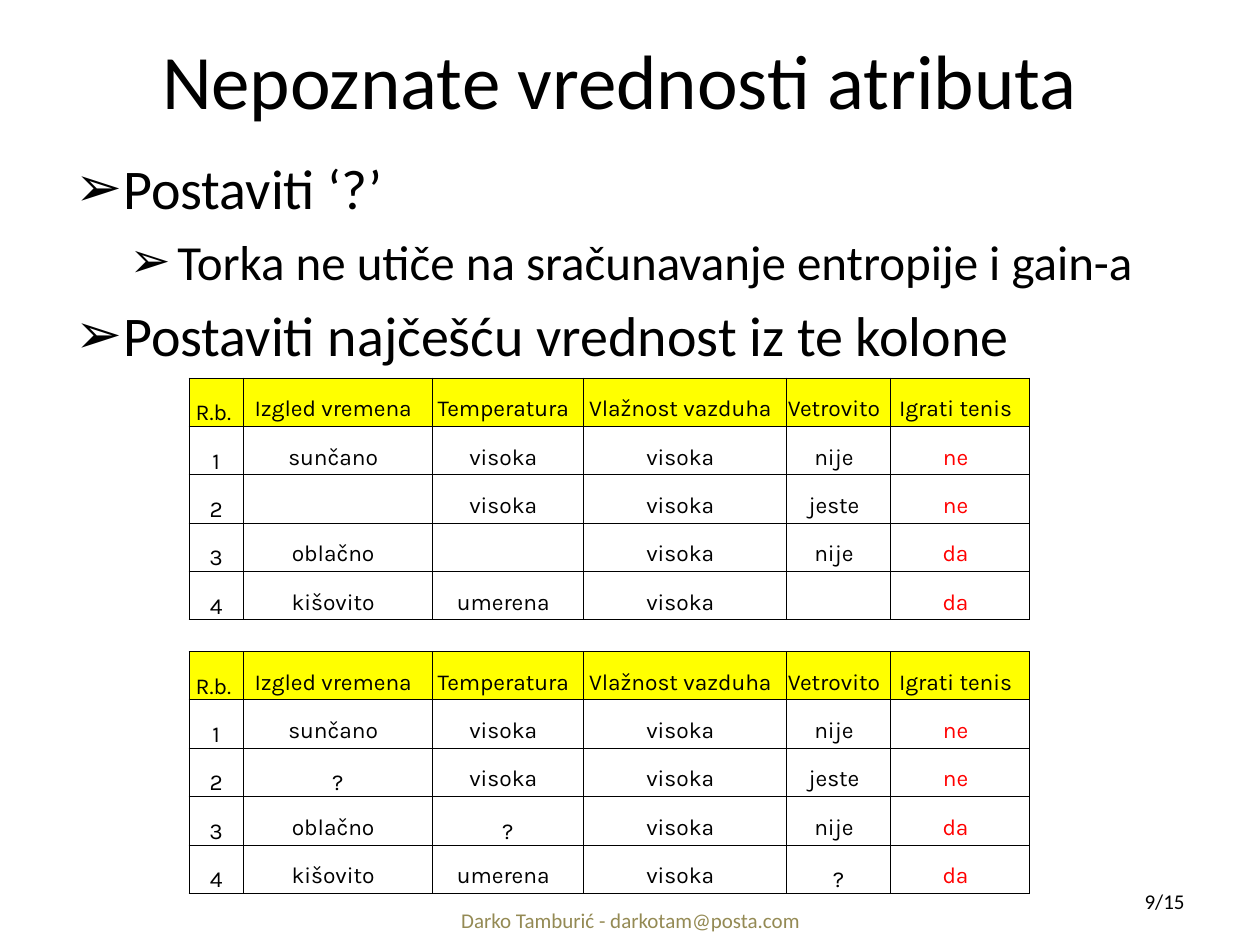
from dataclasses import dataclass

from lxml.etree import SubElement
from pptx import Presentation
from pptx.dml.color import RGBColor
from pptx.enum.text import MSO_ANCHOR, PP_ALIGN
from pptx.oxml.ns import qn
from pptx.util import Inches, Pt


@dataclass(frozen=True)
class Theme:
    font: str = "Calibri"
    grid_font: str = "Karla"
    ink: str = "000000"
    accent: str = "FF0000"
    head: str = "FFFF00"
    muted: str = "948A54"
    title: int = 44
    levels: tuple = (32, 28)
    cell: int = 13
    gap: int = 22
    foot: int = 12
    rule: float = 0.5


THEME = Theme()

POINTS = [
    (0, "Postaviti ‘?’"),
    (1, "Torka ne utiče na sračunavanje entropije i gain-a"),
    (0, "Postaviti najčešću vrednost iz te kolone"),
]
COLS = [0.43, 1.5, 1.2, 1.61, 0.83, 1.1]
HEADS = ["R.b. ", "Izgled vremena", "Temperatura", "Vlažnost vazduha",
         "Vetrovito", "Igrati tenis"]
DAYS = [
    ["1", "sunčano", "visoka", "visoka", "nije", "ne"],
    ["2", "", "visoka", "visoka", "jeste", "ne"],
    ["3", "oblačno", "", "visoka", "nije", "da"],
    ["4", "kišovito", "umerena", "visoka", "", "da"],
]


def add_text(para, text, size, font=THEME.font, color=THEME.ink, align=None):
    if align is not None:
        para.alignment = align
    run = para.add_run()
    run.text = text
    run.font.size = Pt(size)
    run.font.name = font
    run.font.color.rgb = RGBColor.from_string(color)


def add_box(slide, box, anchor):
    frame = slide.shapes.add_textbox(*map(Inches, box)).text_frame
    frame.word_wrap = True
    frame.vertical_anchor = anchor
    return frame


def add_title(slide, box, text):
    title = slide.shapes.title
    title.left, title.top, title.width, title.height = map(Inches, box)
    frame = title.text_frame
    frame.vertical_anchor = MSO_ANCHOR.MIDDLE
    add_text(frame.paragraphs[0], text, THEME.title, align=PP_ALIGN.CENTER)


def add_points(slide, box, points):
    frame = add_box(slide, box, MSO_ANCHOR.TOP)
    for i, (level, text) in enumerate(points):
        para = frame.paragraphs[0] if i == 0 else frame.add_paragraph()
        size = THEME.levels[level]
        para.level = level
        if i:
            para.space_before = Pt(round(size * 0.2))
        props = para._p.get_or_add_pPr()
        props.set("marL", str(Inches(0.38 + 0.43 * level)))
        props.set("indent", str(Inches(-0.38)))
        SubElement(props, qn("a:buFont"), typeface="Arial")
        SubElement(props, qn("a:buChar"), char="➢")
        add_text(para, text, size)


def set_border(cell):
    props = cell._tc.get_or_add_tcPr()
    for i, side in enumerate(("lnL", "lnR", "lnT", "lnB")):
        line = SubElement(props, qn(f"a:{side}"), w=str(Pt(THEME.rule)))
        fill = SubElement(line, qn("a:solidFill"))
        SubElement(fill, qn("a:srgbClr"), val=THEME.ink)
        props.remove(line)
        props.insert(i, line)


def fill_cell(cell, text, head, color, lift):
    """Format one cell; lift adds a tall space that raises the text."""
    cell.vertical_anchor = MSO_ANCHOR.BOTTOM
    cell.margin_left = cell.margin_right = cell.margin_top = Inches(0.01)
    cell.margin_bottom = 0
    if head:
        cell.fill.solid()
        cell.fill.fore_color.rgb = RGBColor.from_string(THEME.head)
    else:
        cell.fill.background()
    set_border(cell)
    if not text:
        return
    para = cell.text_frame.paragraphs[0]
    add_text(para, text, THEME.cell, THEME.grid_font, color, PP_ALIGN.CENTER)
    if lift:
        add_text(para, " ", THEME.gap, THEME.grid_font, color)


def add_grid(slide, box, rows):
    left, top, width, height = map(Inches, box)
    table = slide.shapes.add_table(len(rows), len(COLS), left, top,
                                   width, height).table
    table.first_row = table.horz_banding = False
    for col, size in zip(table.columns, COLS):
        col.width = Inches(size)
    for r, row in enumerate(rows):
        for c, text in enumerate(row):
            head = r == 0
            last = c == len(COLS) - 1
            color = THEME.accent if last and not head else THEME.ink
            fill_cell(table.cell(r, c), text, head, color,
                      lift=c > 0 and text != "?")


def add_foot(slide, box, text, color, align):
    frame = add_box(slide, box, MSO_ANCHOR.MIDDLE)
    add_text(frame.paragraphs[0], text, THEME.foot, color=color, align=align)


def main():
    deck = Presentation()
    deck.slide_width, deck.slide_height = Inches(10), Inches(7.5)
    slide = deck.slides.add_slide(deck.slide_layouts[5])
    add_title(slide, (0.42, 0, 9, 1.25), "Nepoznate vrednosti atributa")
    add_points(slide, (0.5, 1.17, 9, 4.95), POINTS)
    marked = [[text or "?" for text in row] for row in DAYS]
    for top, days in ((3, DAYS), (5.17, marked)):
        add_grid(slide, (1.5, top, sum(COLS), 1.92), [HEADS] + days)
    add_foot(slide, (3.42, 7.1, 3.17, 0.4),
             "Darko Tamburić - darkotam@posta.com", THEME.muted,
             PP_ALIGN.CENTER)
    add_foot(slide, (7.17, 6.95, 2.33, 0.4), "9/15", THEME.ink,
             PP_ALIGN.RIGHT)
    deck.save("out.pptx")


if __name__ == "__main__":
    main()
